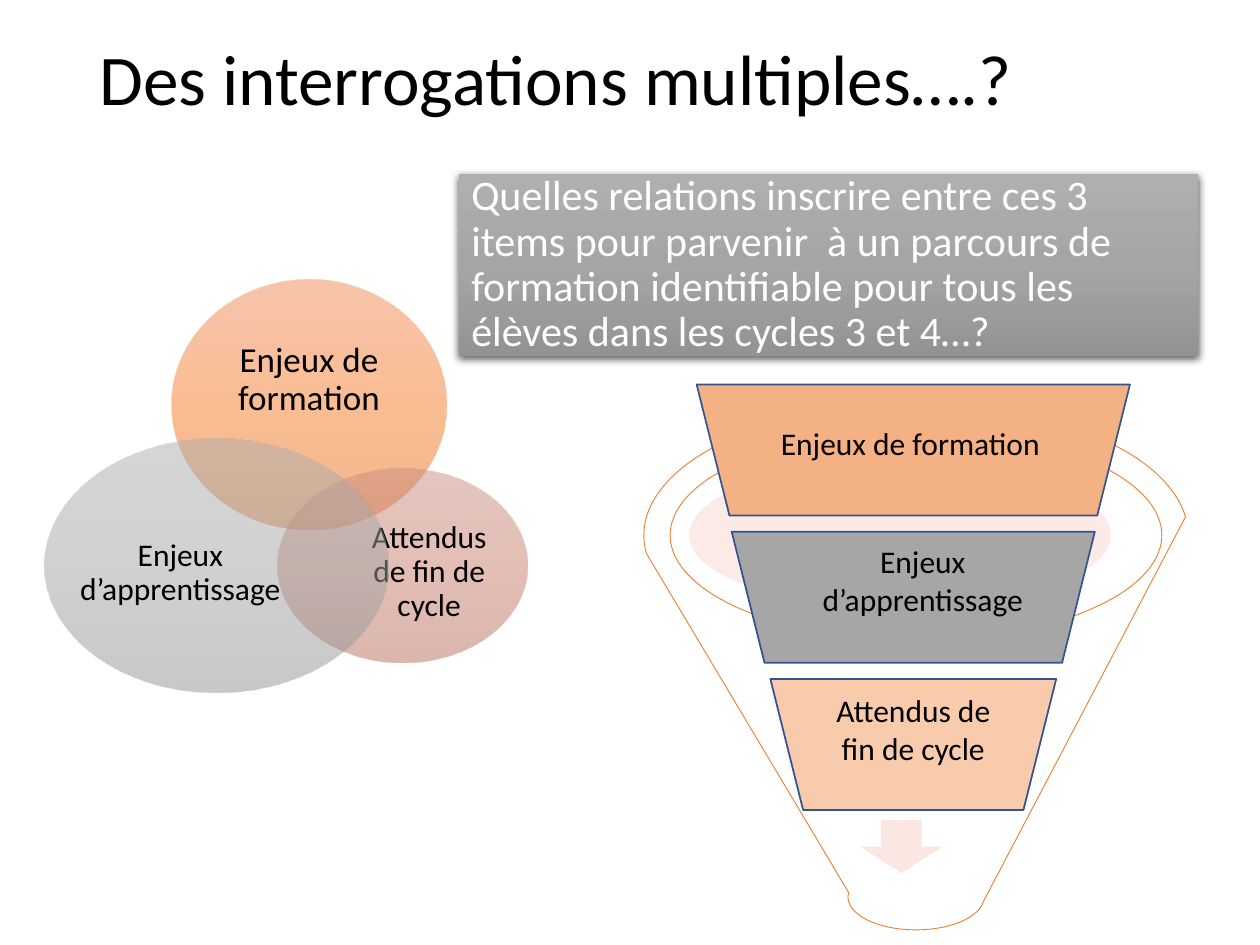
from dataclasses import dataclass

from lxml import etree
from pptx import Presentation
from pptx import util as u
from pptx.dml.color import RGBColor
from pptx.enum import shapes, text
from pptx.oxml.ns import qn

SHAPE = shapes.MSO_SHAPE
LEFT, CENTER = text.PP_ALIGN.LEFT, text.PP_ALIGN.CENTER


@dataclass(frozen=True)
class Theme:
    font: str = "Calibri"
    heading: float = 40.7
    question: float = 24
    large: float = 20
    label: float = 18
    ink: str = "000000"
    paper: str = "FFFFFF"
    grey: tuple = ("AFAFAF", "A5A5A5", "939393")
    orange: tuple = ("F18C57", "F67B28", "E56C19")
    rose: tuple = ("CB8F81", "C97E6B", "B76D5B")
    halo: str = "F6CCBE"
    arrow: str = "F8D7CE"
    rim: str = "ED7D31"
    edge: str = "325491"
    layers: tuple = ("F4B183", "A6A6A6", "F8CBAD")


THEME = Theme()


@dataclass(frozen=True)
class Box:
    """A rectangle in inches, divided by percentages."""
    left: float
    top: float
    width: float
    height: float

    def share(self, x, y, w, h):
        return Box(self.left + self.width * x / 100, self.top + self.height * y / 100,
                   self.width * w / 100, self.height * h / 100)

    def emu(self):
        return [u.Inches(n) for n in (self.left, self.top, self.width, self.height)]


def color_node(parent, color, alpha=100):
    node = etree.SubElement(parent, qn("a:srgbClr"), val=color)
    if alpha < 100:
        etree.SubElement(node, qn("a:alpha"), val=str(alpha * 1000))


def fill_gradient(shape, colors, alpha=100):
    """Three even stops, from top to bottom."""
    shape.fill.gradient()
    shape.fill.gradient_angle = 270
    stops = shape._element.spPr.find(".//" + qn("a:gsLst"))
    for stop in list(stops):
        stops.remove(stop)
    for position, color in zip((0, 50, 100), colors):
        stop = etree.SubElement(stops, qn("a:gs"), pos=str(position * 1000))
        color_node(stop, color, alpha)


def fill_solid(shape, color, alpha=100):
    shape.fill.solid()
    shape.fill.fore_color.rgb = RGBColor.from_string(color)
    if alpha < 100:
        node = shape._element.spPr.find(qn("a:solidFill")).find(qn("a:srgbClr"))
        etree.SubElement(node, qn("a:alpha"), val=str(alpha * 1000))


def add_shape(page, kind, box, line=None, weight=1):
    shape = page.shapes.add_shape(kind, *box.emu())
    shape.shadow.inherit = False
    if line:
        shape.line.color.rgb = RGBColor.from_string(line)
        shape.line.width = u.Pt(weight)
    else:
        shape.line.fill.background()
    return shape


def write(shape, words, size, color=THEME.ink, align=LEFT, spacing=None,
          anchor=text.MSO_ANCHOR.MIDDLE, inset=None):
    frame = shape.text_frame
    frame.text = words
    frame.word_wrap = True
    frame.auto_size = text.MSO_AUTO_SIZE.NONE
    frame.vertical_anchor = anchor
    if inset is not None:
        frame.margin_left = frame.margin_right = u.Inches(inset)
        frame.margin_top = frame.margin_bottom = u.Inches(inset)
    para = frame.paragraphs[0]
    para.alignment = align
    para.line_spacing = spacing
    para.font.name, para.font.size = THEME.font, u.Pt(size)
    para.font.color.rgb = RGBColor.from_string(color)


def add_text(page, box, words, size, **style):
    write(page.shapes.add_textbox(*box.emu()), words, size, **style)


def place_question(page, box):
    title = page.shapes.title
    title.left, title.top, title.width, title.height = box.emu()
    fill_gradient(title, THEME.grey)
    title.line.fill.background()
    effects = etree.SubElement(title._element.spPr, qn("a:effectLst"))
    shadow = etree.SubElement(effects, qn("a:outerShdw"), blurRad=str(u.Pt(4.5)),
                              dist=str(u.Pt(1.5)), dir="5400000", rotWithShape="0")
    color_node(shadow, THEME.ink, 63)
    write(title, "Quelles relations inscrire entre ces 3 items pour parvenir  à un parcours "
          "de formation identifiable pour tous les élèves dans les cycles 3 et 4…?",
          THEME.question, color=THEME.paper, spacing=0.9)


def place_venn(page, box):
    circles = (
        ("Enjeux de formation", THEME.large, THEME.orange,
         (26.3, 0, 56.8, 60.4), (33.9, 10.7, 41.7, 27.1)),
        ("Attendus de fin de cycle", THEME.label, THEME.rose,
         (48.2, 45.7, 51.8, 47), (64.1, 57.9, 31, 25.9)),
        ("Enjeux d’apprentissage", THEME.label, THEME.grey,
         (0, 38.4, 71.1, 61.6), (6.8, 54.3, 42.7, 33.8)),
    )
    for words, size, colors, outline, label in circles:
        circle = add_shape(page, SHAPE.OVAL, box.share(*outline))
        fill_gradient(circle, colors, 50)
        add_text(page, box.share(*label), words, size, align=CENTER, spacing=0.9, inset=0)


def place_funnel(page, box):
    halo = add_shape(page, SHAPE.OVAL, box.share(8.3, 14.1, 77.5, 27))
    fill_solid(halo, THEME.halo, 40)
    arrow = add_shape(page, SHAPE.DOWN_ARROW, box.share(39.8, 79.9, 15, 9.7))
    fill_solid(arrow, THEME.arrow)
    funnel = add_shape(page, SHAPE.FUNNEL, box.share(0, 3.5, 100, 96.5), THEME.rim, 0.5)
    fill_solid(funnel, THEME.paper, 40)

    layers = (
        ("Enjeux de formation", LEFT, 79.6, (22.9, 6, 56.7, 9.2)),
        ("Enjeux d’apprentissage", CENTER, 66.7, (22.9, 27.7, 56.7, 16.4)),
        ("Attendus de fin de cycle", CENTER, 52.5, (31.2, 55, 36.6, 16.4)),
    )
    axis, pitch, depth = 49.5, 27, 24
    for row, (words, align, width, label) in enumerate(layers):
        outline = box.share(axis - width / 2, row * pitch, width, depth)
        layer = add_shape(page, SHAPE.TRAPEZOID, outline, THEME.edge)
        layer.rotation = 180
        fill_solid(layer, THEME.layers[row])
        add_text(page, box.share(*label), words, THEME.label, align=align,
                 anchor=text.MSO_ANCHOR.TOP)


def main():
    deck = Presentation()
    deck.slide_width, deck.slide_height = u.Inches(10), u.Inches(7.5)
    page = deck.slides.add_slide(deck.slide_layouts.get_by_name("Title Only"))
    area = Box(0, 0, 10, 7.5)
    place_question(page, area.share(36.4, 18.4, 58.7, 19.3))
    place_venn(page, area.share(3.5, 29.6, 38.4, 43.7))
    place_funnel(page, area.share(51.1, 40.7, 43.2, 57.7))
    add_text(page, area.share(6.9, 5.3, 76.8, 8), "Des interrogations multiples….?",
             THEME.heading, spacing=0.7)
    deck.save("out.pptx")


if __name__ == "__main__":
    main()
